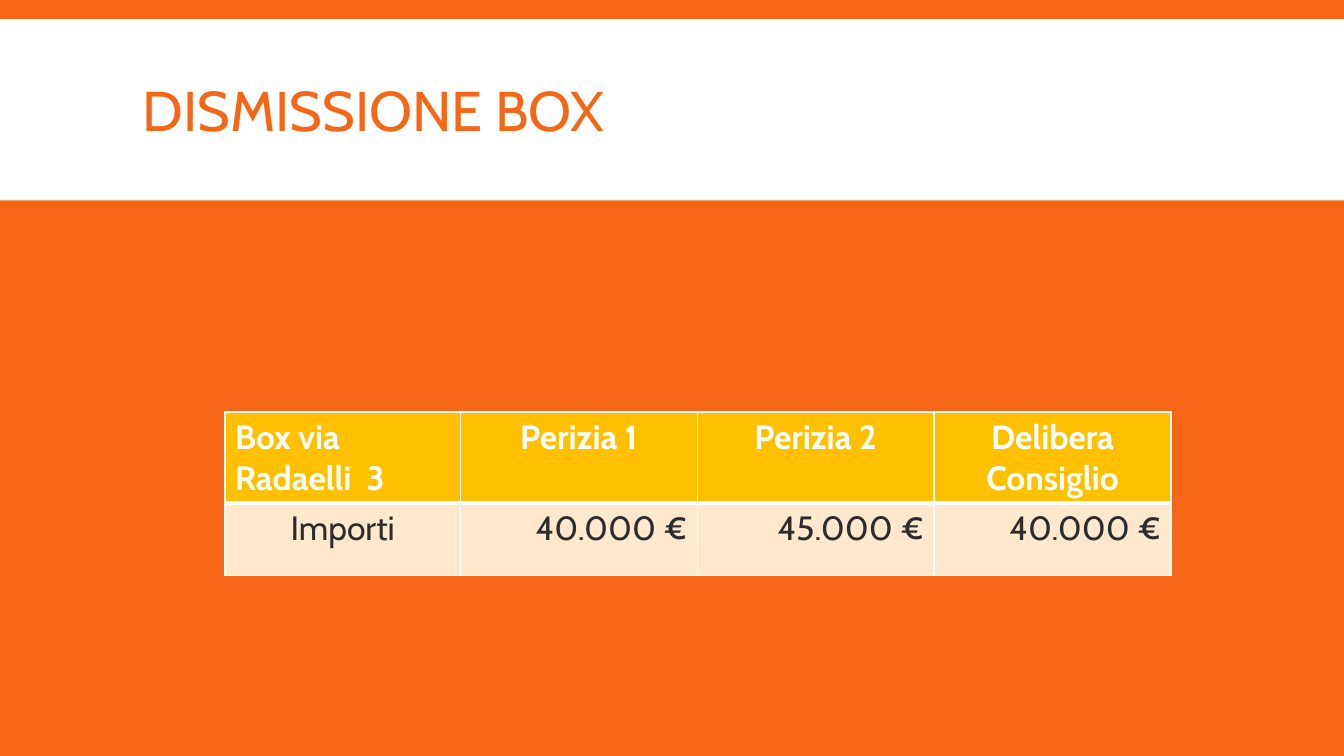
from dataclasses import dataclass

from lxml import etree
from pptx import Presentation
from pptx import util as u
from pptx.dml.color import RGBColor
from pptx.enum import shapes, text
from pptx.oxml import ns

HUES = {
    "orange": "F56617",
    "white": "FFFFFF",
    "gold": "FFC000",
    "cream": "FFE8CC",
    "dark": "2C2C2C",
}
FONT = "Cabin"
LEFT = text.PP_ALIGN.LEFT
MID = text.PP_ALIGN.CENTER
RIGHT = text.PP_ALIGN.RIGHT


@dataclass
class Row:
    words: list[str]
    first: text.PP_ALIGN
    rest: text.PP_ALIGN
    fill: str
    ink: str
    bold: bool
    top: int
    base: int


ROWS = [
    Row(["Box via Radaelli  3", "Perizia 1", "Perizia 2", "Delibera Consiglio"],
        LEFT, MID, "gold", "white", True, 1, 3),
    Row(["Importi", "40.000 €", "45.000 €", "40.000 €"],
        MID, RIGHT, "cream", "dark", False, 3, 1),
]
WIDTHS = [5.93, 5.97, 5.97, 5.97]
HEIGHT = 1.83


def paint(fill, hue: str) -> None:
    fill.solid()
    fill.fore_color.rgb = RGBColor.from_string(HUES[hue])


def write(para, words: str, size: int, ink: str, bold: bool) -> None:
    run = para.add_run()
    run.text = words
    run.font.name = FONT
    run.font.size = u.Pt(size)
    run.font.bold = bold
    run.font.color.rgb = RGBColor.from_string(HUES[ink])


def edge(cell, row: Row) -> None:
    props = cell._tc.get_or_add_tcPr()
    sides = {"L": 1, "R": 1, "T": row.top, "B": row.base}
    for spot, (side, width) in enumerate(sides.items()):
        line = etree.Element(ns.qn(f"a:ln{side}"), w=str(u.Pt(width)))
        fill = etree.SubElement(line, ns.qn("a:solidFill"))
        etree.SubElement(fill, ns.qn("a:srgbClr"), val=HUES["white"])
        props.insert(spot, line)


def add_band(slide, width: int) -> None:
    band = slide.shapes.add_shape(
        shapes.MSO_SHAPE.RECTANGLE, 0, u.Cm(0.48), width, u.Cm(4.57))
    band.shadow.inherit = False
    paint(band.fill, "white")
    band.line.fill.background()


def add_title(slide, words: str) -> None:
    box = slide.shapes.add_textbox(u.Cm(3.35), u.Cm(0.79), u.Cm(27.18), u.Cm(4.19))
    frame = box.text_frame
    frame.word_wrap = True
    frame.vertical_anchor = text.MSO_ANCHOR.MIDDLE
    para = frame.paragraphs[0]
    para.line_spacing = 0.85
    write(para, words, 40, "orange", False)


def add_grid(slide, rows: list[Row]) -> None:
    grid = slide.shapes.add_table(
        len(rows), len(WIDTHS), u.Cm(5.67), u.Cm(10.38),
        u.Cm(sum(WIDTHS)), u.Cm(HEIGHT * len(rows))).table
    for col, width in zip(grid.columns, WIDTHS):
        col.width = u.Cm(width)
    for line, row in zip(grid.rows, rows):
        line.height = u.Cm(HEIGHT)
        for spot, (cell, words) in enumerate(zip(line.cells, row.words)):
            paint(cell.fill, row.fill)
            edge(cell, row)
            para = cell.text_frame.paragraphs[0]
            para.alignment = row.rest if spot else row.first
            write(para, words, 24, row.ink, row.bold)


def main() -> None:
    deck = Presentation()
    deck.slide_width = u.Cm(33.87)
    deck.slide_height = u.Cm(19.05)
    slide = deck.slides.add_slide(deck.slide_layouts[6])
    paint(slide.background.fill, "orange")
    add_band(slide, deck.slide_width)
    add_title(slide, "DISMISSIONE BOX")
    add_grid(slide, ROWS)
    deck.save("out.pptx")


if __name__ == "__main__":
    main()
